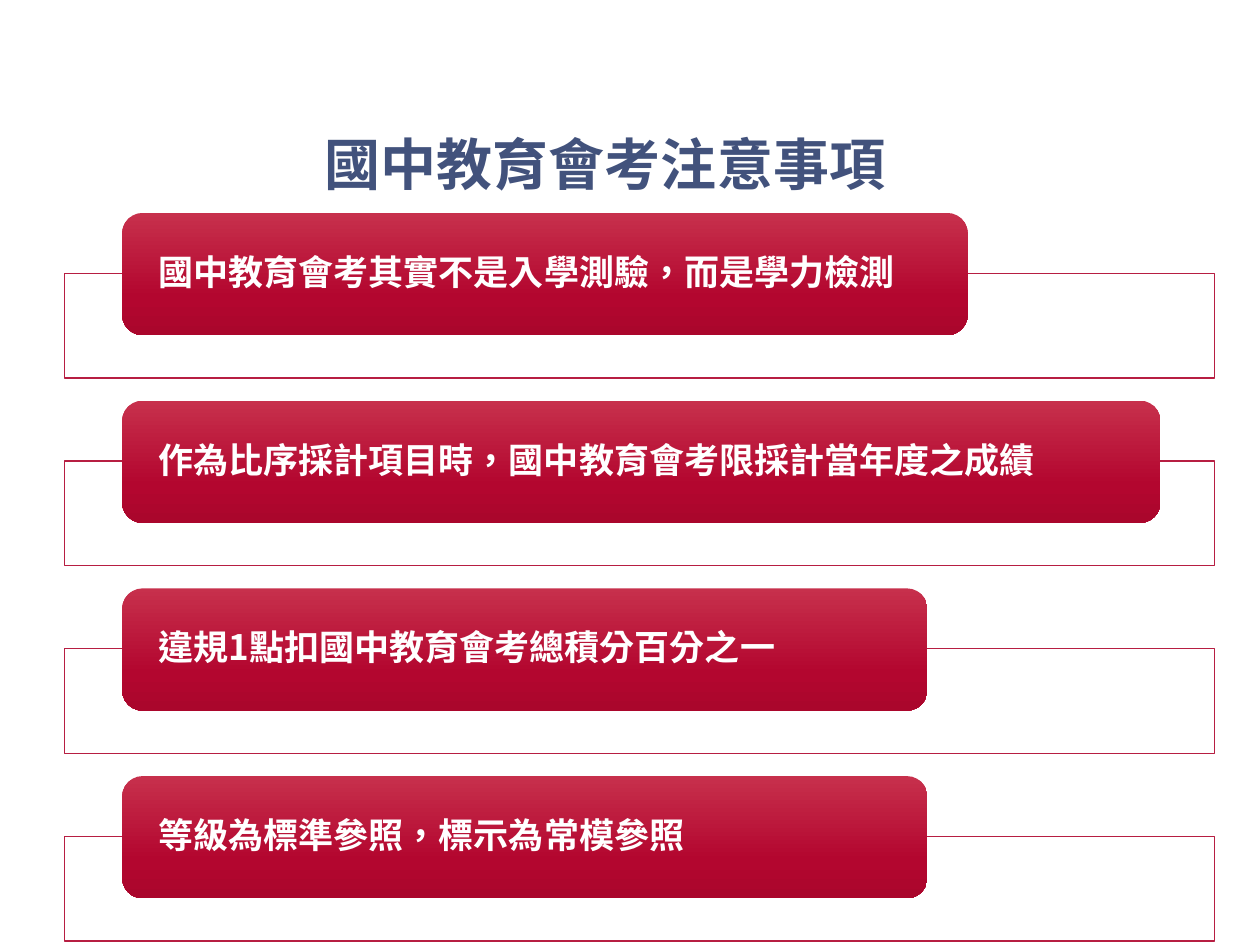
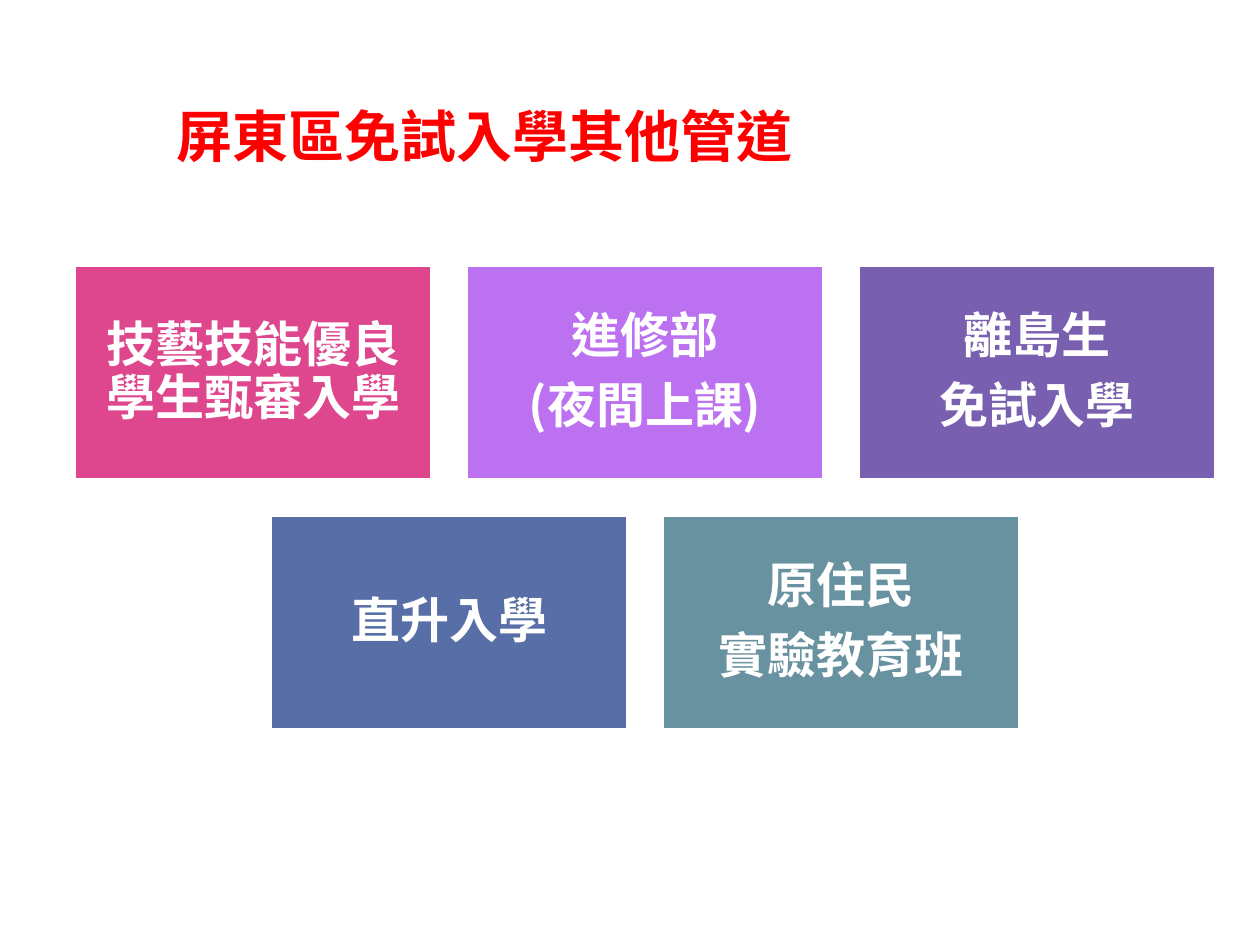
import pptx
import pptx.util
import pptx.dml.color
import pptx.enum.shapes
import pptx.enum.text
import pptx.oxml
import pptx.oxml.ns

Inch = pptx.util.Inches
Pt = pptx.util.Pt
Shape = pptx.enum.shapes.MSO_SHAPE
Align = pptx.enum.text.PP_ALIGN
Anchor = pptx.enum.text.MSO_ANCHOR
qn = pptx.oxml.ns.qn

FONT = "Noto Sans CJK SC"
WIDE, HIGH = 10, 7.5
COLORS = {
    "white": "FFFFFF", "navy": "42527C", "red": "FF0000", "edge": "B71E42",
    "light": "C7304C", "mid": "B3062F", "dark": "AA062C",
    "pink": "DE478E", "lilac": "BC72F0", "plum": "795FAF",
    "blue": "586EA6", "teal": "6892A0",
}

# Notes on the exam: text and bar width
NOTES = [
    ("國中教育會考其實不是入學測驗，而是學力檢測", 6.71),
    ("作為比序採計項目時，國中教育會考限採計當年度之成績", 8.24),
    ("違規1點扣國中教育會考總積分百分之一", 6.39),
    ("等級為標準參照，標示為常模參照", 6.39),
]

# Other ways in: rows of tiles, each with its lines and colour
PATHS = [
    [(["技藝技能優良學生甄審入學"], "pink"),
     (["進修部", "(夜間上課)"], "lilac"),
     (["離島生", "免試入學"], "plum")],
    [(["直升入學"], "blue"),
     (["原住民", "實驗教育班"], "teal")],
]


def color(name):
    return pptx.dml.color.RGBColor.from_string(COLORS[name])


def write(shape, lines, size, tint="white", align=Align.LEFT,
          anchor=Anchor.MIDDLE, pad=(0.1, 0.05), wrap=True, line=None, after=0):
    """Fill a shape with one paragraph per line of text."""
    frame = shape.text_frame
    frame.word_wrap = wrap
    frame.vertical_anchor = anchor
    frame.margin_left = frame.margin_right = Inch(pad[0])
    frame.margin_top = frame.margin_bottom = Inch(pad[1])
    for num, text in enumerate(lines):
        para = frame.paragraphs[0] if num == 0 else frame.add_paragraph()
        para.alignment = align
        para.line_spacing = line
        para.space_after = Pt(after * size)
        run = para.add_run()
        run.text = text
        font = run.font
        font.name, font.size, font.bold = FONT, Pt(size), True
        font.color.rgb = color(tint)
        props = font._element
        props.set("lang", "zh-TW")
        east = props.makeelement(qn("a:ea"), {"typeface": FONT})
        props.find(qn("a:latin")).addnext(east)


def title(slide, text, left, top, width, tint, wrap=True):
    box = slide.shapes.add_textbox(Inch(left), Inch(top), Inch(width), Inch(0.64))
    write(box, [text], 32, tint, anchor=Anchor.TOP, wrap=wrap)


def block(slide, kind, left, top, width, height, fill=None, edge=None, weight=1):
    """Add a preset shape with a plain fill and an optional outline."""
    shape = slide.shapes.add_shape(
        kind, Inch(left), Inch(top), Inch(width), Inch(height))
    shape.shadow.inherit = False
    if fill:
        shape.fill.solid()
        shape.fill.fore_color.rgb = color(fill)
    if edge:
        shape.line.color.rgb = color(edge)
        shape.line.width = Pt(weight)
    else:
        shape.line.fill.background()
    return shape


def fade(shape, stops):
    """Give a shape a gradient that runs from top to bottom."""
    marks = "".join(
        f'<a:gs pos="{pos * 1000}"><a:srgbClr val="{COLORS[name]}"/></a:gs>'
        for pos, name in stops)
    grad = pptx.oxml.parse_xml(
        f'<a:gradFill {pptx.oxml.ns.nsdecls("a")} rotWithShape="1">'
        f'<a:gsLst>{marks}</a:gsLst><a:lin ang="5400000" scaled="0"/></a:gradFill>')
    shape._element.spPr.find(qn("a:prstGeom")).addnext(grad)


def note(slide, text, top, width):
    """Add an outlined frame with a red bar over its upper edge."""
    frame = block(slide, Shape.RECTANGLE, 0.51, top + 0.48, 9.13, 0.83,
                  "white", "edge", 0.75)
    tone = frame._element.spPr.find(qn("a:solidFill"))[0]
    tone.append(tone.makeelement(qn("a:alpha"), {"val": "90000"}))
    bar = block(slide, Shape.ROUNDED_RECTANGLE, 0.97, top, width, 0.97)
    fade(bar, [(0, "light"), (69, "mid"), (100, "dark")])
    write(bar, [text], 20, pad=(0.24, 0), line=0.9, after=0.35)


def tiles(slide, rows, center, top, width, height, gap):
    """Lay out rows of tiles, each row centred on the same axis."""
    for num, row in enumerate(rows):
        span = len(row) * (width + gap) - gap
        for col, (lines, fill) in enumerate(row):
            tile = block(slide, Shape.RECTANGLE,
                         center - span / 2 + col * (width + gap),
                         top + num * (height + gap),
                         width, height, fill, "white", 1.75)
            write(tile, lines, 28, align=Align.CENTER, pad=(0.12, 0.12),
                  line=0.9, after=0.35)


def main():
    deck = pptx.Presentation()
    deck.slide_width, deck.slide_height = Inch(WIDE), Inch(HIGH)
    blank = deck.slide_layouts[6]

    # Exam notes
    slide = deck.slides.add_slide(blank)
    title(slide, "國中教育會考注意事項", 2.48, 0.98, 4.69, "navy", wrap=False)
    for num, (text, width) in enumerate(NOTES):
        note(slide, text, 1.69 + num * 1.49, width)

    # Other ways in
    slide = deck.slides.add_slide(blank)
    title(slide, "屏東區免試入學其他管道", 1.3, 0.76, 8.5, "red")
    tiles(slide, PATHS, center=5.12, top=2.11, width=2.83, height=1.7, gap=0.28)

    deck.save("out.pptx")


if __name__ == "__main__":
    main()
